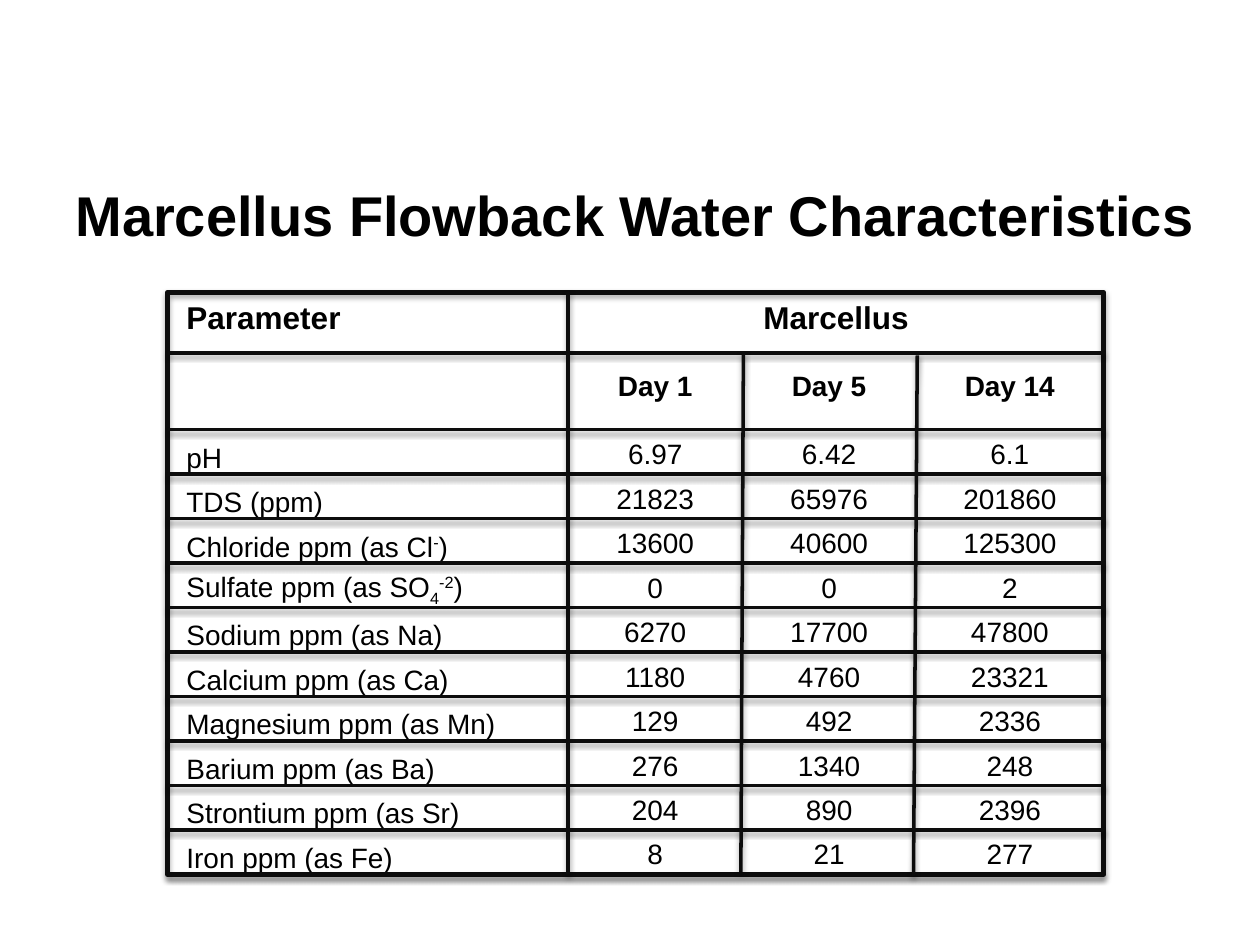
import pptx
import pptx.dml.color
import pptx.enum.shapes
import pptx.enum.text
import pptx.oxml
import pptx.oxml.ns
import pptx.util
from pptx.util import Inches

ALIGN = pptx.enum.text.PP_ALIGN
ANCHOR = pptx.enum.text.MSO_ANCHOR
TEXT, RULE = "000000", "0D0D0D"
NO_STYLE = "{2D5ABB26-0587-4C30-8999-92F81FD0307C}"

LEFT, TOP, RIGHT, BOTTOM = 1.33, 2.32, 8.76, 6.94
COLUMN_EDGES = [LEFT, 4.51, 5.89, 7.27, RIGHT]
HEADER_HEIGHTS = [0.48, 0.61]
DAYS = ["Day 1", "Day 5", "Day 14"]
# A label is a list of (text, baseline shift in thousandths of a percent).
DATA = [
    ([("pH", 0)], ["6.97", "6.42", "6.1"]),
    ([("TDS (ppm)", 0)], ["21823", "65976", "201860"]),
    ([("Chloride ppm (as Cl", 0), ("-", 30000), (")", 0)], ["13600", "40600", "125300"]),
    ([("Sulfate ppm (as SO", 0), ("4", -25000), ("-2", 30000), (")", 0)], ["0", "0", "2"]),
    ([("Sodium ppm (as Na)", 0)], ["6270", "17700", "47800"]),
    ([("Calcium ppm (as Ca)", 0)], ["1180", "4760", "23321"]),
    ([("Magnesium ppm (as Mn)", 0)], ["129", "492", "2336"]),
    ([("Barium ppm (as Ba)", 0)], ["276", "1340", "248"]),
    ([("Strontium ppm (as Sr)", 0)], ["204", "890", "2396"]),
    ([("Iron ppm (as Fe)", 0)], ["8", "21", "277"]),
]
DATA_HEIGHT = (BOTTOM - TOP - sum(HEADER_HEIGHTS)) / len(DATA)
ROW_HEIGHTS = HEADER_HEIGHTS + [DATA_HEIGHT] * len(DATA)


def rgb(color):
    return pptx.dml.color.RGBColor.from_string(color)


def write(p, runs, size, bold=False, align=ALIGN.LEFT):
    p.alignment = align
    for text, baseline in runs:
        r = p.add_run()
        r.text = text
        for name, value in {"name": "Arial", "size": pptx.util.Pt(size), "bold": bold}.items():
            setattr(r.font, name, value)
        r.font.color.rgb = rgb(TEXT)
        if baseline:
            r.font._element.set("baseline", str(baseline))


def fill_cell(cell, runs, size=16, bold=False, align=ALIGN.CENTER, anchor=ANCHOR.TOP,
              left=0, top=0):
    margins = {"margin_left": left, "margin_top": top, "margin_right": 0, "margin_bottom": 0}
    for name, value in margins.items():
        setattr(cell, name, Inches(value))
    cell.vertical_anchor = anchor
    write(cell.text_frame.paragraphs[0], runs, size, bold, align)


def add_shadow(s, alpha, distance):
    """Cast a soft shadow straight down; distance is in points."""
    s._element.spPr.append(pptx.oxml.parse_xml(
        f'<a:effectLst {pptx.oxml.ns.nsdecls("a")}>'
        f'<a:outerShdw blurRad="{pptx.util.Pt(3.1)}" dist="{pptx.util.Pt(distance)}" '
        f'dir="5400000" rotWithShape="0"><a:srgbClr val="000000">'
        f'<a:alpha val="{alpha * 1000}"/></a:srgbClr></a:outerShdw></a:effectLst>'))


def add_title(slide, text):
    tf = slide.shapes.add_textbox(Inches(0.5), Inches(1.34), Inches(9.18), Inches(0.78)).text_frame
    tf.word_wrap = True
    tf.vertical_anchor = ANCHOR.MIDDLE
    p = tf.paragraphs[0]
    p.line_spacing = 0.9
    write(p, [(text, 0)], 32, True)


def add_data_table(slide):
    table = slide.shapes.add_table(
        len(ROW_HEIGHTS), len(DAYS) + 1, Inches(LEFT), Inches(TOP),
        Inches(RIGHT - LEFT), Inches(BOTTOM - TOP)).table
    table.first_row = table.horz_banding = False
    table._tbl.tblPr.find(pptx.oxml.ns.qn("a:tableStyleId")).text = NO_STYLE
    for column, start, end in zip(table.columns, COLUMN_EDGES, COLUMN_EDGES[1:]):
        column.width = Inches(end - start)
    for row, height in zip(table.rows, ROW_HEIGHTS):
        row.height = Inches(height)
    for cell in table.iter_cells():
        cell.fill.background()

    table.cell(0, 1).merge(table.cell(0, 3))
    fill_cell(table.cell(0, 0), [("Parameter", 0)], 18, True, ALIGN.LEFT, left=0.15, top=0.07)
    fill_cell(table.cell(0, 1), [("Marcellus", 0)], 18, True, top=0.07)
    for col, day in enumerate(DAYS, 1):
        fill_cell(table.cell(1, col), [(day, 0)], bold=True, top=0.15)
    for row, (label, values) in enumerate(DATA, len(HEADER_HEIGHTS)):
        fill_cell(table.cell(row, 0), label, align=ALIGN.LEFT, anchor=ANCHOR.BOTTOM, left=0.15)
        for col, value in enumerate(values, 1):
            fill_cell(table.cell(row, col), [(value, 0)], top=0.08)


def add_frame(slide):
    s = slide.shapes.add_shape(
        pptx.enum.shapes.MSO_SHAPE.RECTANGLE, Inches(LEFT), Inches(TOP),
        Inches(RIGHT - LEFT), Inches(BOTTOM - TOP))
    s.fill.background()
    s.line.color.rgb = rgb(RULE)
    s.line.width = pptx.util.Pt(3)
    add_shadow(s, 35, 1.8)


def add_rule(slide, x1, y1, x2, y2):
    s = slide.shapes.add_connector(
        pptx.enum.shapes.MSO_CONNECTOR.STRAIGHT, *map(Inches, (x1, y1, x2, y2)))
    s.line.color.rgb = rgb(RULE)
    s.line.width = pptx.util.Pt(2)
    add_shadow(s, 38, 1.6)


def add_rules(slide):
    y = TOP
    for height in ROW_HEIGHTS:
        y += height
        add_rule(slide, LEFT, y, RIGHT, y)
    add_rule(slide, 4.51, TOP, 4.51, BOTTOM)
    add_rule(slide, 5.9, 2.8, 5.88, 6.92)
    add_rule(slide, 7.28, 2.82, 7.25, 6.95)


def main():
    prs = pptx.Presentation()
    prs.slide_width, prs.slide_height = Inches(10), Inches(7.5)
    slide = prs.slides.add_slide(prs.slide_layouts[6])
    add_title(slide, "Marcellus Flowback Water Characteristics")
    add_data_table(slide)
    add_frame(slide)
    add_rules(slide)
    prs.save("out.pptx")


if __name__ == "__main__":
    main()
